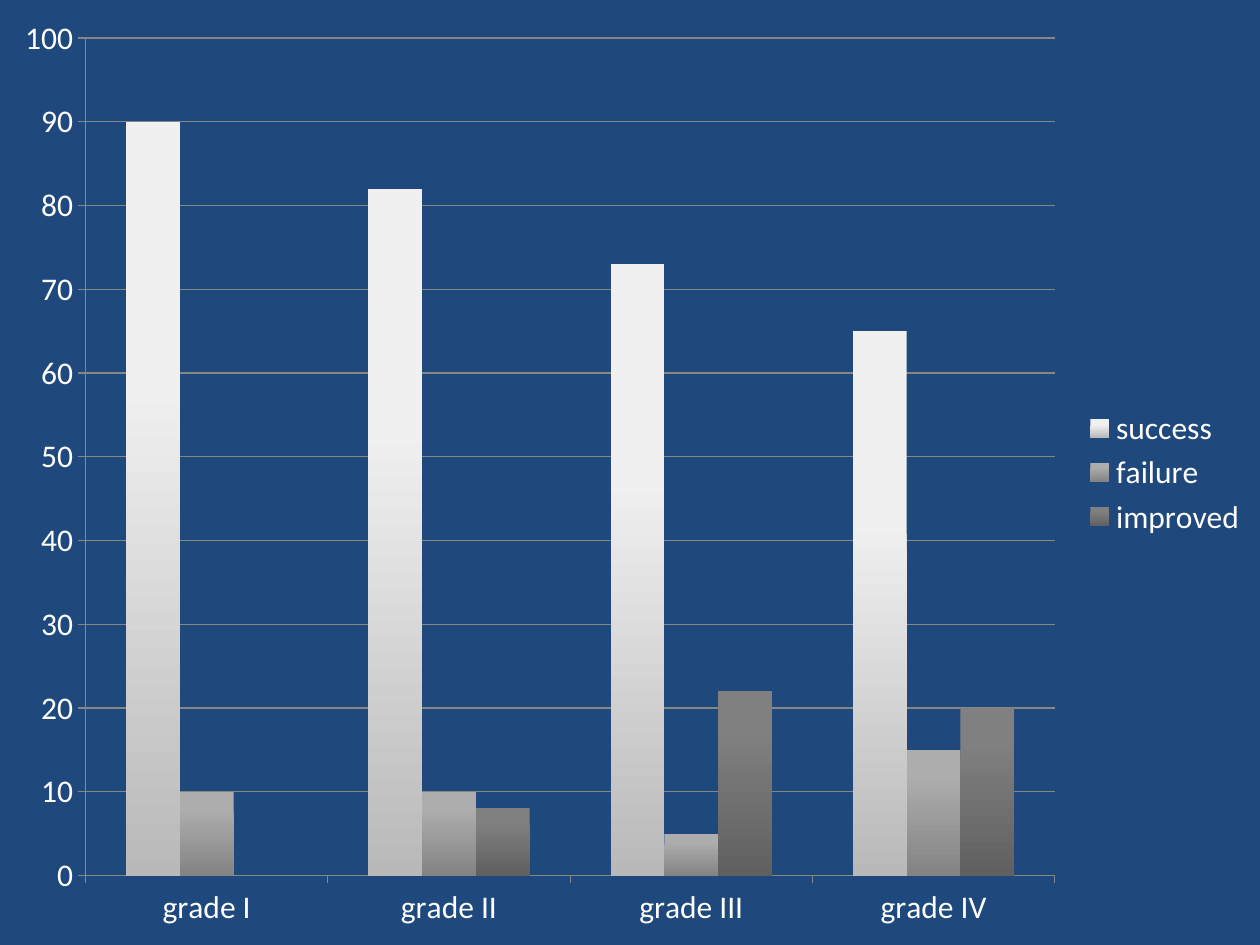
import pptx
import pptx.util
import pptx.chart.data
import pptx.dml.color
import pptx.enum.chart as enums

Inches, Pt = pptx.util.Inches, pptx.util.Pt

COLORS = {"back": "1F497D", "text": "FFFFFF", "line": "868686"}
GRADES = ["grade I", "grade II", "grade III", "grade IV"]
# name, values, top colour, bottom colour, where the fade starts
SERIES = [
    ("success", (90, 82, 73, 65), "F0F0F0", "B9B9B9", 0.35),
    ("failure", (10, 10, 5, 15), "ADADAD", "848484", 0.2),
    ("improved", (0, 8, 22, 20), "808080", "606060", 0.2),
]


def rgb(code):
    return pptx.dml.color.RGBColor.from_string(code)


def put(item, values):
    for name, value in values.items():
        setattr(item, name, value)


def draw_line(line):
    line.color.rgb = rgb(COLORS["line"])
    line.width = Pt(0.75)


def fade(fill, top, bottom, start):
    fill.gradient()
    fill.gradient_angle = 270
    for stop, code, place in zip(fill.gradient_stops, (top, bottom), (start, 1)):
        stop.color.rgb = rgb(code)
        stop.position = place


def add_bars(slide, left, top, width, height):
    data = pptx.chart.data.CategoryChartData()
    data.categories = GRADES
    for name, values, *_ in SERIES:
        data.add_series(name, values)
    chart = slide.shapes.add_chart(
        enums.XL_CHART_TYPE.COLUMN_CLUSTERED, left, top, width, height, data
    ).chart
    put(chart, {"has_title": False, "has_legend": True})
    put(chart.font, {"name": "Calibri", "size": Pt(18)})
    chart.font.color.rgb = rgb(COLORS["text"])
    put(chart.legend, {"position": enums.XL_LEGEND_POSITION.RIGHT,
                       "include_in_layout": False})

    # Bars
    plot = chart.plots[0]
    put(plot, {"gap_width": 150, "overlap": 0, "vary_by_categories": False})
    for bars, (_, _, *shade) in zip(plot.series, SERIES):
        bars.invert_if_negative = False
        fade(bars.format.fill, *shade)

    # Axes and grid
    for axis in (chart.category_axis, chart.value_axis):
        put(axis, {"major_tick_mark": enums.XL_TICK_MARK.OUTSIDE,
                   "minor_tick_mark": enums.XL_TICK_MARK.NONE})
        draw_line(axis.format.line)
    put(chart.value_axis, {"minimum_scale": 0, "maximum_scale": 100,
                           "major_unit": 10, "has_major_gridlines": True})
    draw_line(chart.value_axis.major_gridlines.format.line)


def main():
    deck = pptx.Presentation()
    put(deck, {"slide_width": Inches(10), "slide_height": Inches(7.5)})
    slide = deck.slides.add_slide(deck.slide_layouts[6])
    slide.background.fill.solid()
    slide.background.fill.fore_color.rgb = rgb(COLORS["back"])
    add_bars(slide, 0, 0, Inches(10), Inches(7.5))
    deck.save("out.pptx")


if __name__ == "__main__":
    main()
